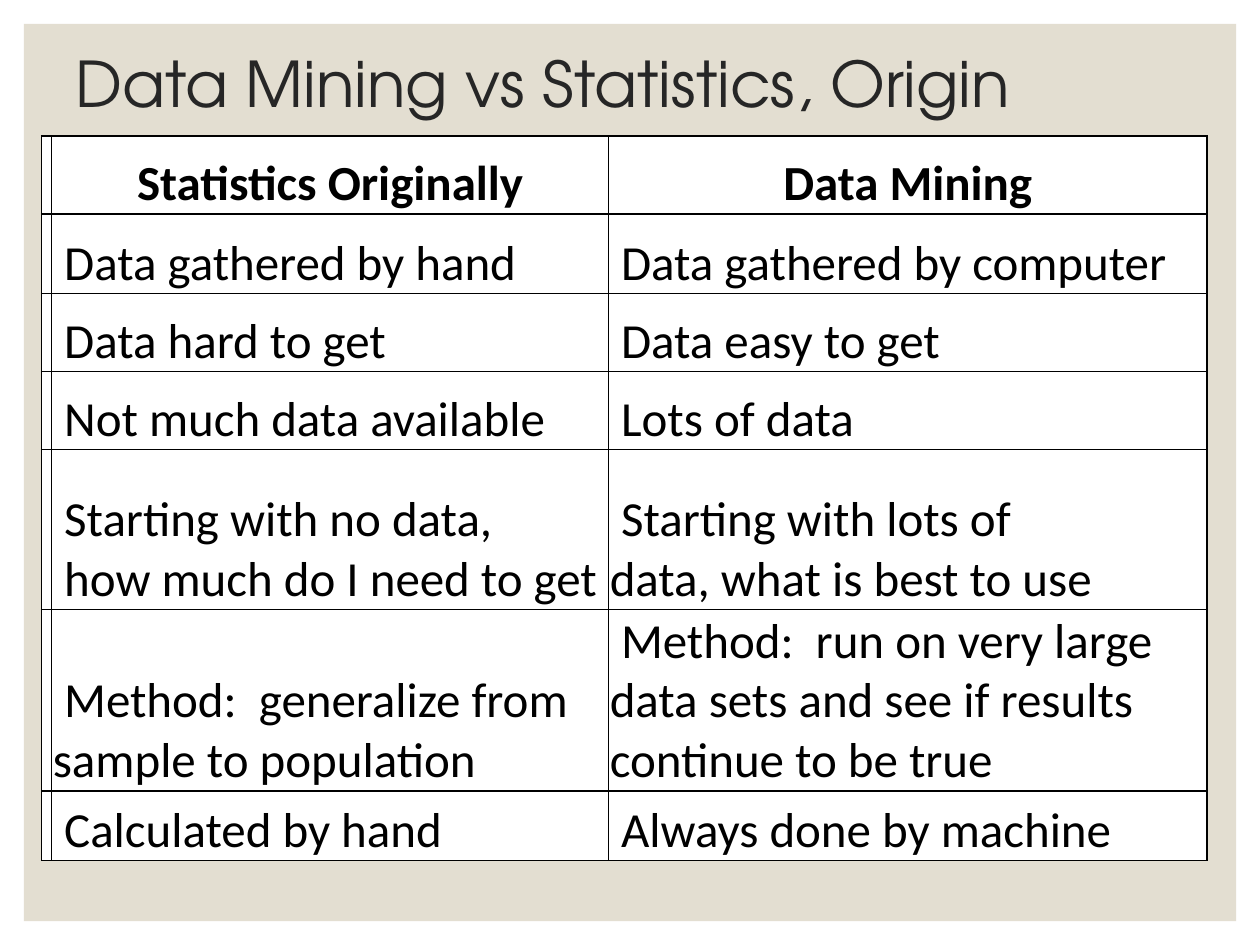
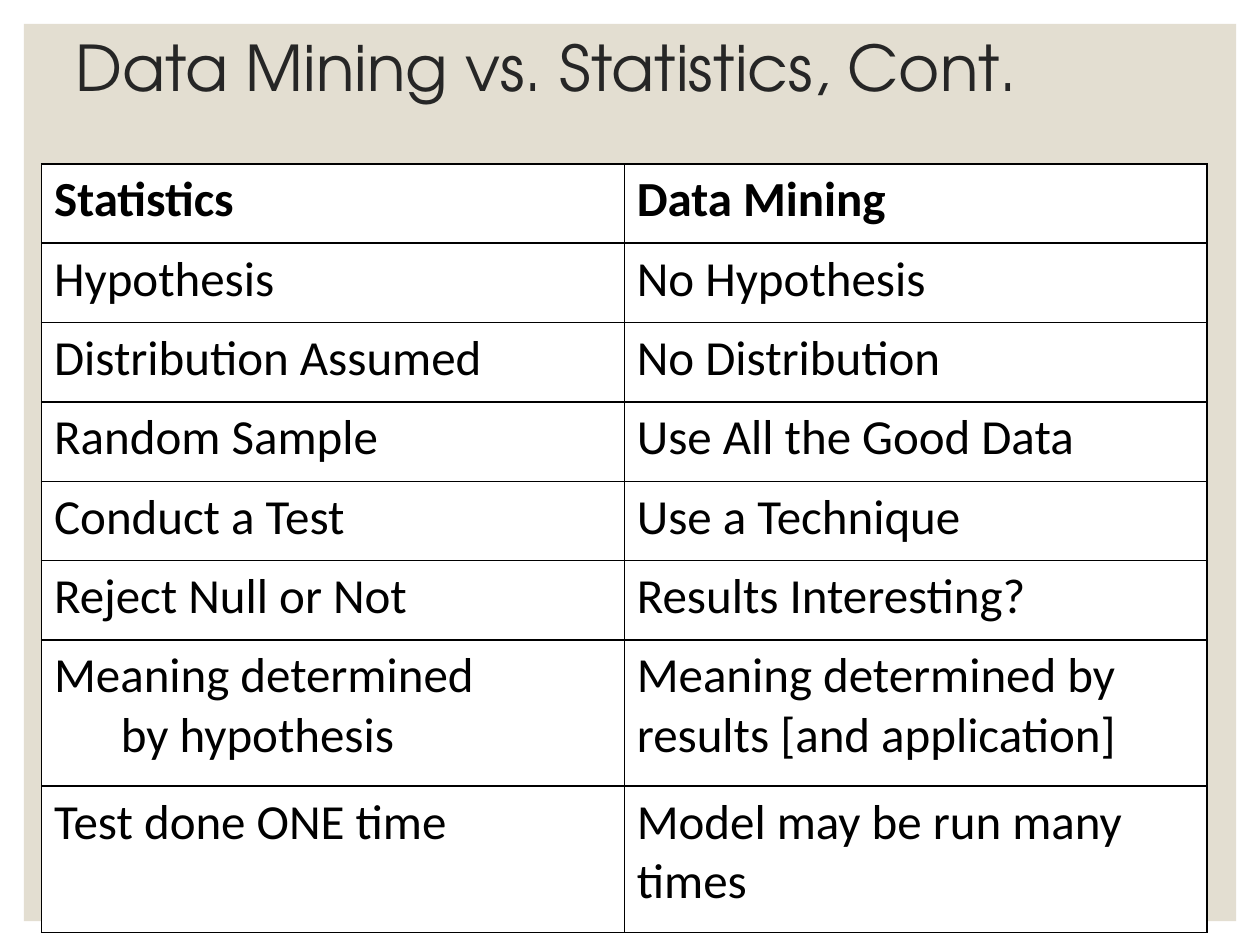
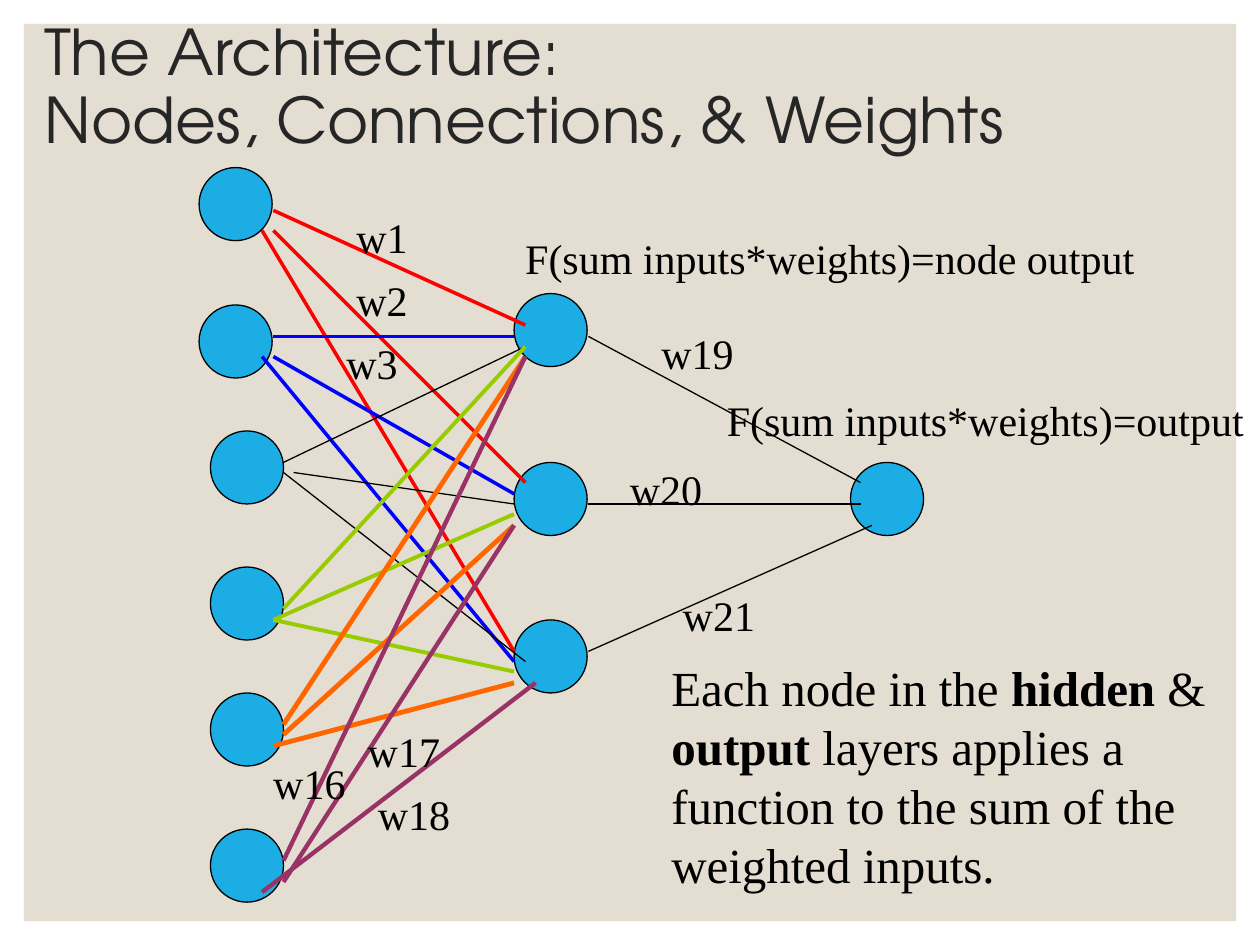
import pptx
import pptx.dml.color
import pptx.enum.shapes
import pptx.enum.text
import pptx.oxml
import pptx.oxml.ns
import pptx.util
from pptx.util import Inches

COLORS = {
    "band": "E3DED1", "title": "262626", "black": "000000", "white": "FFFFFF",
    "node": "1CADE4", "red": "FF0000", "blue": "0000FF", "green": "99CC00",
    "orange": "FF6600", "plum": "993366",
}
TITLE_FONT, TABLE_FONT, LABEL_FONT = "TeX Gyre Adventor", "Calibri", "Times New Roman"
NODE_SIZE = 0.58
LEFT, CENTER = pptx.enum.text.PP_ALIGN.LEFT, pptx.enum.text.PP_ALIGN.CENTER
TOP, MIDDLE, BOTTOM = (pptx.enum.text.MSO_ANCHOR.TOP, pptx.enum.text.MSO_ANCHOR.MIDDLE,
                       pptx.enum.text.MSO_ANCHOR.BOTTOM)

ORIGIN_ROWS = [
    ("Statistics Originally", "Data Mining"),
    ("Data gathered by hand", "Data gathered by computer"),
    ("Data hard to get", "Data easy to get"),
    ("Not much data available", "Lots of data"),
    ("Starting with no data,\nhow much do I need to get",
     "Starting with lots of\vdata, what is best to use"),
    ("Method:  generalize from sample to population",
     "Method:  run on very large data sets and see if results continue to be true"),
    ("Calculated by hand", "Always done by machine"),
]
CONTRAST_ROWS = [
    ("Statistics", "Data Mining"),
    ("Hypothesis", "No Hypothesis"),
    ("Distribution Assumed", "No Distribution"),
    ("Random Sample", "Use All the Good Data"),
    ("Conduct a Test", "Use a Technique"),
    ("Reject Null or Not", "Results Interesting?"),
    ("Meaning determined\nby hypothesis",
     "Meaning determined by results [and application]"),
    ("Test done ONE time", "Model may be run many times"),
]
NODES = [
    (1.58, 1.33), (1.58, 2.42), (1.67, 3.42), (1.67, 4.5), (1.67, 5.5), (1.67, 6.58),
    (4.08, 4.92), (4.08, 3.67), (4.08, 2.33), (6.75, 3.67),
]
CONNECTIONS = [
    ("black", 0.75, [(4.67, 2.67, 6.83, 3.83), (4.67, 4, 6.83, 4), (4.67, 5.17, 6.92, 4.17)]),
    ("red", 2, [(2.17, 1.67, 4.17, 2.58), (2.17, 1.83, 4.17, 3.83), (2.08, 1.83, 4.08, 5.17)]),
    ("blue", 2, [(2.17, 2.67, 4.08, 2.67), (2.17, 2.83, 4.08, 3.92), (2.08, 2.83, 4.08, 5.25)]),
    ("black", 0.75, [(2.25, 3.67, 4.17, 2.75), (2.33, 3.75, 4.08, 4), (2.25, 3.75, 4.17, 5.25)]),
    ("green", 2.25, [(2.25, 4.83, 4.17, 2.75), (2.17, 4.92, 4.08, 4.08), (2.17, 4.92, 4.08, 5.33)]),
    ("orange", 2.75, [(2.25, 5.75, 4.17, 2.83), (2.25, 5.83, 4.08, 4.17), (2.17, 5.92, 4.08, 5.42)]),
    ("plum", 2.5, [(2.25, 6.83, 4.17, 2.83), (2.25, 7, 4.08, 4.17), (2.08, 7.08, 4.25, 5.42)]),
]
LABELS = [
    ("w1", 2.73, 1.63, 0.61), ("w2", 2.73, 2.13, 0.61), ("w3", 2.65, 2.63, 0.61),
    ("w16", 2.07, 5.96, 0.78), ("w17", 2.82, 5.71, 0.78), ("w18", 2.9, 6.21, 0.78),
    ("w19", 5.15, 2.55, 0.78), ("w20", 4.9, 3.63, 0.78), ("w21", 5.32, 4.63, 0.78),
    ("F(sum inputs*weights)=node output", 4.07, 1.8, 5.1),
    ("F(sum inputs*weights)=output", 5.67, 3.08, 4.33),
]
NOTE = [
    ("Each node in the ", False), ("hidden", True), (" & ", False), ("output", True),
    (" layers applies a function to the sum of the weighted inputs.", False),
]


def rgb(name):
    """Return the named colour."""
    return pptx.dml.color.RGBColor.from_string(COLORS[name])


def style(p, font, size, color="black", bold=False):
    """Format every run of a paragraph."""
    for r in p.runs:
        r.font.name = font
        r.font.size = pptx.util.Pt(size)
        r.font.bold = bold
        r.font.color.rgb = rgb(color)


def add_band(slide):
    """Put the background panel on the slide master."""
    sp = slide.shapes.add_shape(pptx.enum.shapes.MSO_SHAPE.RECTANGLE,
                                Inches(0.19), Inches(0.19), Inches(9.62), Inches(7.12))
    sp.shadow.inherit = False
    sp.fill.solid()
    sp.fill.fore_color.rgb = rgb("band")
    sp.line.fill.background()
    sp.element.nvSpPr.cNvPr.set("id", "20")
    slide.slide_layout.slide_master.shapes.element.insert(2, sp.element)


def add_slide(prs, title, left, top, width, height):
    """Add a title-only slide with a placed title."""
    slide = prs.slides.add_slide(prs.slide_layouts[5])
    sp = slide.shapes.title
    sp.left, sp.top, sp.width, sp.height = map(Inches, (left, top, width, height))
    tf = sp.text_frame
    tf.text = title
    tf.auto_size = pptx.enum.text.MSO_AUTO_SIZE.NONE
    tf.vertical_anchor = MIDDLE
    p = tf.paragraphs[0]
    p.alignment = LEFT
    p.line_spacing = 0.9
    style(p, TITLE_FONT, 36, "title")
    return slide


def format_cell(cell, margins, anchor):
    """Give a cell black borders, white fill and margins."""
    tcPr = cell._tc.get_or_add_tcPr()
    for side in ("L", "R", "T", "B"):
        tcPr.append(pptx.oxml.parse_xml(
            f'<a:ln{side} {pptx.oxml.ns.nsdecls("a")} w="12700"><a:solidFill>'
            f'<a:srgbClr val="{COLORS["black"]}"/></a:solidFill></a:ln{side}>'))
    cell.fill.solid()
    cell.fill.fore_color.rgb = rgb("white")
    (cell.margin_left, cell.margin_top,
     cell.margin_right, cell.margin_bottom) = map(Inches, margins)
    cell.vertical_anchor = anchor


def add_grid(slide, top, widths, heights, rows, margins, anchor, header_align=LEFT):
    """Add a bordered table with a bold header row and return it."""
    table = slide.shapes.add_table(len(heights), len(widths), Inches(0.33), Inches(top),
                                   Inches(sum(widths)), Inches(sum(heights))).table
    table.first_row = table.horz_banding = False
    for column, width in zip(table.columns, widths):
        column.width = Inches(width)
    for row, height in zip(table.rows, heights):
        row.height = Inches(height)
    for i, texts in enumerate(rows):
        for j, text in enumerate(texts):
            cell = table.cell(i, j)
            format_cell(cell, margins, anchor)
            cell.text_frame.text = text
            for p in cell.text_frame.paragraphs:
                p.alignment = LEFT if i else header_align
                style(p, TABLE_FONT, 28, bold=i == 0)
    return table


def indent(p, inches):
    """Indent the first line of a paragraph."""
    p._p.get_or_add_pPr().set("indent", str(Inches(inches)))


def add_node(slide, left, top):
    """Add a network node."""
    sp = slide.shapes.add_shape(pptx.enum.shapes.MSO_SHAPE.OVAL, Inches(left), Inches(top),
                                Inches(NODE_SIZE), Inches(NODE_SIZE))
    sp.shadow.inherit = False
    sp.fill.solid()
    sp.fill.fore_color.rgb = rgb("node")
    sp.line.color.rgb = rgb("black")
    sp.line.width = pptx.util.Pt(0.75)


def add_connection(slide, ends, color, width):
    """Add a straight line between two points."""
    line = slide.shapes.add_connector(pptx.enum.shapes.MSO_CONNECTOR.STRAIGHT,
                                      *map(Inches, ends))
    line.line.color.rgb = rgb(color)
    line.line.width = pptx.util.Pt(width)
    line.element.spPr.append(
        pptx.oxml.parse_xml(f'<a:effectLst {pptx.oxml.ns.nsdecls("a")}/>'))


def add_text(slide, runs, left, top, width, height, size, wrap=False):
    """Add a text box made of (text, bold) runs."""
    tf = slide.shapes.add_textbox(Inches(left), Inches(top),
                                  Inches(width), Inches(height)).text_frame
    tf.word_wrap = wrap
    tf.auto_size = pptx.enum.text.MSO_AUTO_SIZE.SHAPE_TO_FIT_TEXT
    p = tf.paragraphs[0]
    for text, _ in runs:
        p.add_run().text = text
    style(p, LABEL_FONT, size)
    for r, (_, bold) in zip(p.runs, runs):
        r.font.bold = bold


def build_origin(prs):
    """Build the slide on the origins of both fields."""
    slide = add_slide(prs, "Data Mining vs Statistics, Origin", 0.5, 0.3, 8.17, 0.78)
    add_band(slide)
    table = add_grid(slide, 1.08, [0.08, 4.42, 4.75],
                     [0.62, 0.63, 0.62, 0.62, 1.27, 1.44, 0.55],
                     [("", *row) for row in ORIGIN_ROWS],
                     (0.01, 0.01, 0.01, 0), BOTTOM, CENTER)
    for i in range(1, len(ORIGIN_ROWS)):
        for j in (1, 2):
            for p in table.cell(i, j).text_frame.paragraphs:
                indent(p, 0.09)


def build_contrast(prs):
    """Build the slide that contrasts both methods."""
    slide = add_slide(prs, "Data Mining vs. Statistics, Cont.", 0.5, 0.25, 8.17, 0.63)
    table = add_grid(slide, 1.3, [9.25 / 2] * 2, [0.63] * 6 + [1.16] * 2, CONTRAST_ROWS,
                     (0.1, 0.05, 0.1, 0.05), TOP)
    indent(table.cell(6, 0).text_frame.paragraphs[1], 0.53)


def build_architecture(prs):
    """Build the neural network slide."""
    slide = add_slide(prs, "The Architecture:\vNodes, Connections, & Weights",
                      0.25, 0.25, 9.58, 0.92)
    for left, top in NODES:
        add_node(slide, left, top)
    for color, width, lines in CONNECTIONS:
        for ends in lines:
            add_connection(slide, ends, color, width)
    add_text(slide, NOTE, 5.23, 5.17, 4.52, 1.97, 28, wrap=True)
    for text, left, top, width in LABELS:
        add_text(slide, [(text, False)], left, top, width, 0.5, 24)


def main():
    """Build and save the presentation."""
    prs = pptx.Presentation()
    prs.slide_width, prs.slide_height = Inches(10), Inches(7.5)
    build_origin(prs)
    build_contrast(prs)
    build_architecture(prs)
    prs.save("out.pptx")


if __name__ == "__main__":
    main()
